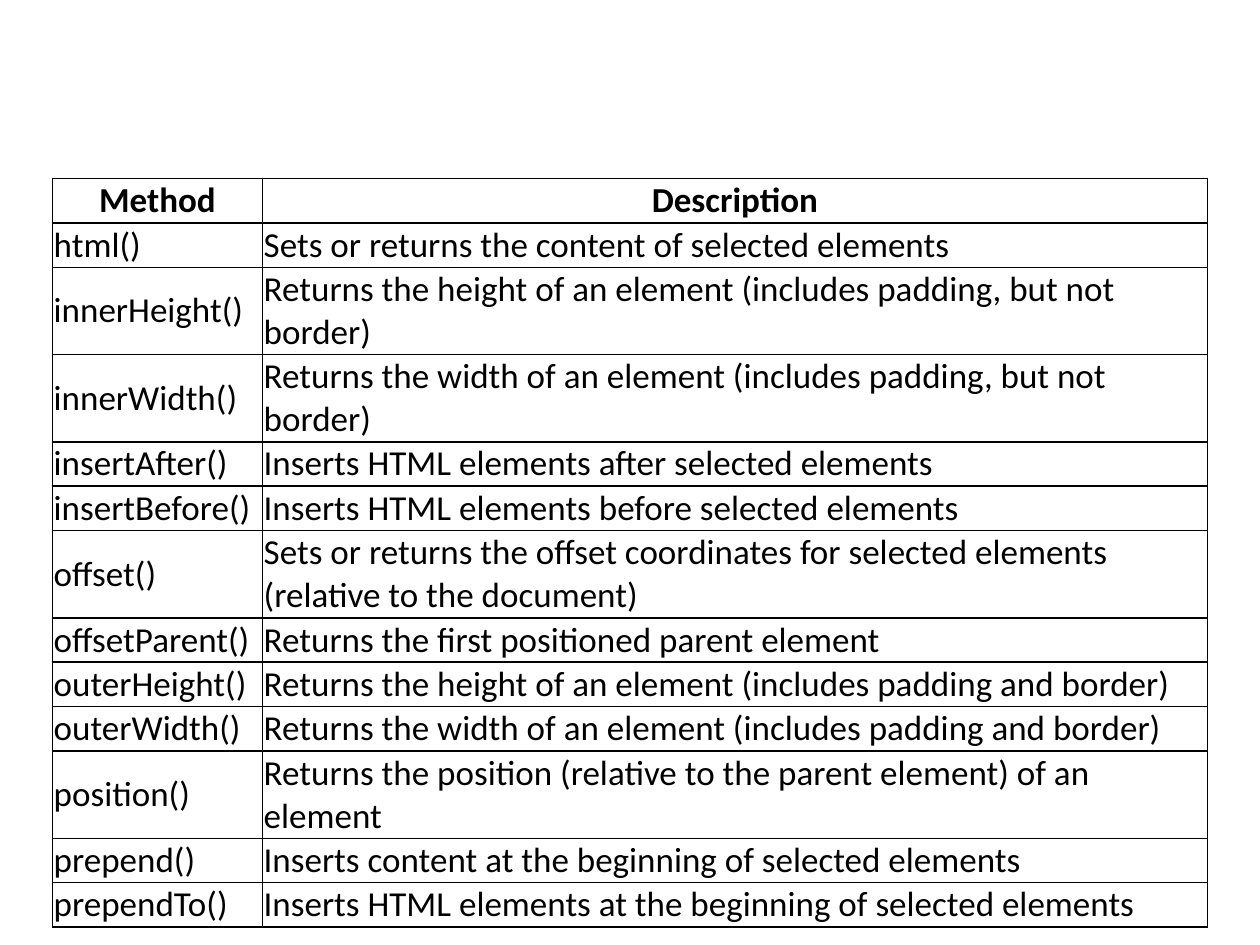
from dataclasses import dataclass

from lxml import etree
from pptx import Presentation
from pptx.dml.color import RGBColor
from pptx.enum.text import MSO_ANCHOR, PP_ALIGN
from pptx.oxml.ns import qn
from pptx.util import Inches, Pt

CENTER, LEFT = PP_ALIGN.CENTER, PP_ALIGN.LEFT
MIDDLE = MSO_ANCHOR.MIDDLE
BLANK_LAYOUT = 6


@dataclass(frozen=True)
class Theme:
    font: str = "Calibri"
    size: int = 20
    ink: str = "000000"
    border: int = 1
    side_inset: float = 0.01
    line_inset: float = 0.43  # points, above and below the text


THEME = Theme()

COLUMN_WIDTHS = (5 / 3, 7.5)
ROW_HEIGHT = 0.3
METHODS = (
    ("Method", "Description"),
    ("html()", "Sets or returns the content of selected elements"),
    ("innerHeight()", "Returns the height of an element (includes padding, but not border)"),
    ("innerWidth()", "Returns the width of an element (includes padding, but not border)"),
    ("insertAfter()", "Inserts HTML elements after selected elements"),
    ("insertBefore()", "Inserts HTML elements before selected elements"),
    ("offset()", "Sets or returns the offset coordinates for selected elements (relative to the document)"),
    ("offsetParent()", "Returns the first positioned parent element"),
    ("outerHeight()", "Returns the height of an element (includes padding and border)"),
    ("outerWidth()", "Returns the width of an element (includes padding and border)"),
    ("position()", "Returns the position (relative to the parent element) of an element"),
    ("prepend()", "Inserts content at the beginning of selected elements"),
    ("prependTo()", "Inserts HTML elements at the beginning of selected elements"),
)


def add_borders(cell):
    properties = cell._tc.get_or_add_tcPr()
    for side in ("a:lnL", "a:lnR", "a:lnT", "a:lnB"):
        line = etree.SubElement(properties, qn(side), w=str(Pt(THEME.border)))
        fill = etree.SubElement(line, qn("a:solidFill"))
        etree.SubElement(fill, qn("a:srgbClr"), val=THEME.ink)


def fill_cell(cell, text, is_header):
    # Borders come before the fill in the cell properties
    add_borders(cell)
    cell.fill.background()
    cell.vertical_anchor = MIDDLE
    cell.margin_left = cell.margin_right = Inches(THEME.side_inset)
    cell.margin_top = cell.margin_bottom = Pt(THEME.line_inset)

    # Text
    cell.text_frame.text = text
    para = cell.text_frame.paragraphs[0]
    para.alignment = CENTER if is_header else LEFT
    font = para.runs[0].font
    font.name = THEME.font
    font.size = Pt(THEME.size)
    font.bold = is_header
    font.color.rgb = RGBColor.from_string(THEME.ink)


def add_method_table(page, left, top, height):
    frame = page.shapes.add_table(
        len(METHODS), len(COLUMN_WIDTHS), Inches(left), Inches(top),
        Inches(sum(COLUMN_WIDTHS)), Inches(height))
    table = frame.table
    table.first_row = table.horz_banding = False
    for column, width in zip(table.columns, COLUMN_WIDTHS):
        column.width = Inches(width)
    for index, (row, texts) in enumerate(zip(table.rows, METHODS)):
        row.height = Inches(ROW_HEIGHT)
        for cell, text in zip(row.cells, texts):
            fill_cell(cell, text, is_header=index == 0)
    # Wrapped rows make the frame taller than the sum of the row heights
    frame.height = Inches(height)


def main():
    deck = Presentation()
    deck.slide_width, deck.slide_height = Inches(10), Inches(7.5)
    page = deck.slides.add_slide(deck.slide_layouts[BLANK_LAYOUT])
    add_method_table(page, left=5 / 12, top=17 / 12, height=5.83)
    deck.save("out.pptx")


if __name__ == "__main__":
    main()
